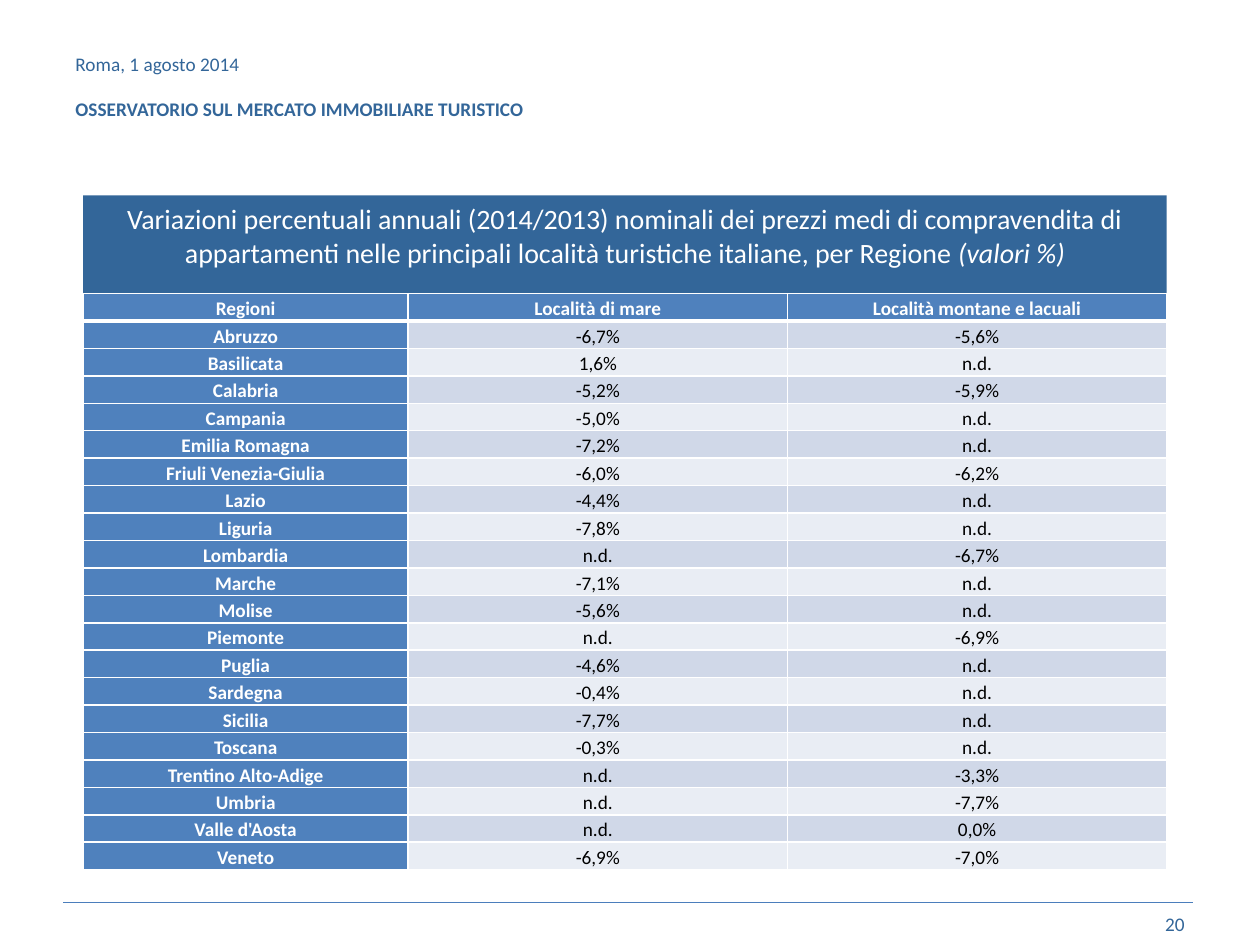
from lxml.etree import SubElement
from pptx import Presentation
from pptx.dml.color import RGBColor
from pptx.enum.shapes import MSO_CONNECTOR
from pptx.enum.text import MSO_ANCHOR, MSO_AUTO_SIZE, PP_ALIGN
from pptx.oxml.ns import qn
from pptx.util import Inches, Pt

NAVY = RGBColor(0x33, 0x66, 0x99)
BLUE = RGBColor(0x4F, 0x81, 0xBD)
RULE_BLUE = RGBColor(0x4B, 0x7E, 0xBC)
BAND_DARK = RGBColor(0xD0, 0xD8, 0xE8)
BAND_LIGHT = RGBColor(0xE9, 0xED, 0xF4)
WHITE = RGBColor(0xFF, 0xFF, 0xFF)
BLACK = RGBColor(0x00, 0x00, 0x00)

HEADINGS = ("Regioni", "Località di mare", "Località montane e lacuali")
PRICE_CHANGES = [
    ("Abruzzo", "-6,7%", "-5,6%"),
    ("Basilicata", "1,6%", "n.d."),
    ("Calabria", "-5,2%", "-5,9%"),
    ("Campania", "-5,0%", "n.d."),
    ("Emilia Romagna", "-7,2%", "n.d."),
    ("Friuli Venezia-Giulia", "-6,0%", "-6,2%"),
    ("Lazio", "-4,4%", "n.d."),
    ("Liguria", "-7,8%", "n.d."),
    ("Lombardia", "n.d.", "-6,7%"),
    ("Marche", "-7,1%", "n.d."),
    ("Molise", "-5,6%", "n.d."),
    ("Piemonte", "n.d.", "-6,9%"),
    ("Puglia", "-4,6%", "n.d."),
    ("Sardegna", "-0,4%", "n.d."),
    ("Sicilia", "-7,7%", "n.d."),
    ("Toscana", "-0,3%", "n.d."),
    ("Trentino Alto-Adige", "n.d.", "-3,3%"),
    ("Umbria", "n.d.", "-7,7%"),
    ("Valle d'Aosta", "n.d.", "0,0%"),
    ("Veneto", "-6,9%", "-7,0%"),
]


class SlideBuilder:
    """Holds the text style and the current slide."""

    font_name = "Calibri"
    text_size = Pt(11)
    title_size = Pt(16)

    def __init__(self, page):
        self.page = page

    def style(self, span, color, size=None, bold=False, italic=False):
        span.font.name = self.font_name
        span.font.size = size or self.text_size
        span.font.bold = bold
        span.font.italic = italic
        span.font.color.rgb = color

    def rule(self, left, right, top):
        line = self.page.shapes.add_connector(
            MSO_CONNECTOR.STRAIGHT, Inches(left), Inches(top), Inches(right), Inches(top))
        line.line.color.rgb = RULE_BLUE
        line.line.width = Pt(0.25)
        SubElement(line._element.spPr, qn("a:effectLst"))

    def text(self, area, lines, align=PP_ALIGN.LEFT):
        """Add a text box; lines are (text, bold) pairs."""
        box = self.page.shapes.add_textbox(*map(Inches, area))
        frame = box.text_frame
        frame.word_wrap = True
        frame.vertical_anchor = MSO_ANCHOR.MIDDLE
        frame.text = "\n".join(content for content, bold in lines)
        for index, (para, (content, bold)) in enumerate(zip(frame.paragraphs, lines)):
            para.alignment = align
            if index:
                para.space_before = Pt(12)
            self.style(para.runs[0], NAVY, bold=bold)

    def banner(self, area, content, unit):
        title = self.page.shapes.title
        title.left, title.top, title.width, title.height = map(Inches, area)
        title.fill.solid()
        title.fill.fore_color.rgb = NAVY
        frame = title.text_frame
        frame.text = content
        frame.word_wrap = True
        frame.auto_size = MSO_AUTO_SIZE.SHAPE_TO_FIT_TEXT
        frame.vertical_anchor = MSO_ANCHOR.TOP
        para = frame.paragraphs[0]
        para.alignment = PP_ALIGN.CENTER
        para.add_run().text = unit
        for span, italic in zip(para.runs, (False, True)):
            self.style(span, WHITE, self.title_size, italic=italic)

    def borders(self, cell, top, bottom):
        properties = cell._tc.get_or_add_tcPr()
        for side, width in (("L", 1), ("R", 1), ("T", top), ("B", bottom)):
            edge = SubElement(properties, qn(f"a:ln{side}"), w=str(Pt(width)))
            fill = SubElement(edge, qn("a:solidFill"))
            SubElement(fill, qn("a:srgbClr"), val=str(WHITE))

    def cell(self, cell, content, row, column):
        is_heading = row == 0 or column == 0
        self.borders(cell, 3 if row == 1 else 1, 3 if row == 0 else 1)
        cell.fill.solid()
        cell.fill.fore_color.rgb = BLUE if is_heading else BAND_DARK if row % 2 else BAND_LIGHT
        cell.margin_left = cell.margin_right = Inches(0.07 if column else 0.05)
        cell.margin_top = cell.margin_bottom = 0
        cell.vertical_anchor = MSO_ANCHOR.MIDDLE
        cell.text_frame.text = content
        para = cell.text_frame.paragraphs[0]
        para.alignment = PP_ALIGN.CENTER
        para.line_spacing = 1.15
        self.style(para.runs[0], WHITE if is_heading else BLACK, bold=is_heading)

    def table(self, area, widths, records):
        table = self.page.shapes.add_table(
            len(records), len(widths), *map(Inches, area)).table
        for column, width in zip(table.columns, widths):
            column.width = Inches(width)
        for row, record in enumerate(records):
            table.rows[row].height = Inches(area[3] / len(records))
            for column, content in enumerate(record):
                self.cell(table.cell(row, column), content, row, column)


def main():
    deck = Presentation()
    deck.slide_width, deck.slide_height = Inches(10), Inches(7.5)
    builder = SlideBuilder(deck.slides.add_slide(deck.slide_layouts[5]))

    # Header and footer
    builder.rule(0.5, 9.47, 7.16)
    builder.text((0.5, 0.3, 7.41, 0.77), [
        ("Roma, 1 agosto 2014", False),
        ("OSSERVATORIO SUL MERCATO IMMOBILIARE TURISTICO", True),
    ])
    builder.text((7.17, 7.13, 2.33, 0.4), [("20", False)], PP_ALIGN.RIGHT)

    # Title banner
    builder.banner(
        (0.66, 1.55, 8.6, 0.64),
        "Variazioni percentuali annuali (2014/2013) nominali dei prezzi medi di compravendita "
        "di appartamenti nelle principali località turistiche italiane, per Regione ",
        "(valori %)")

    # Price changes by region
    builder.table((0.66, 2.33, 8.6, 4.58), (2.58, 3.01, 3.01), [HEADINGS, *PRICE_CHANGES])

    deck.save("out.pptx")


if __name__ == "__main__":
    main()
